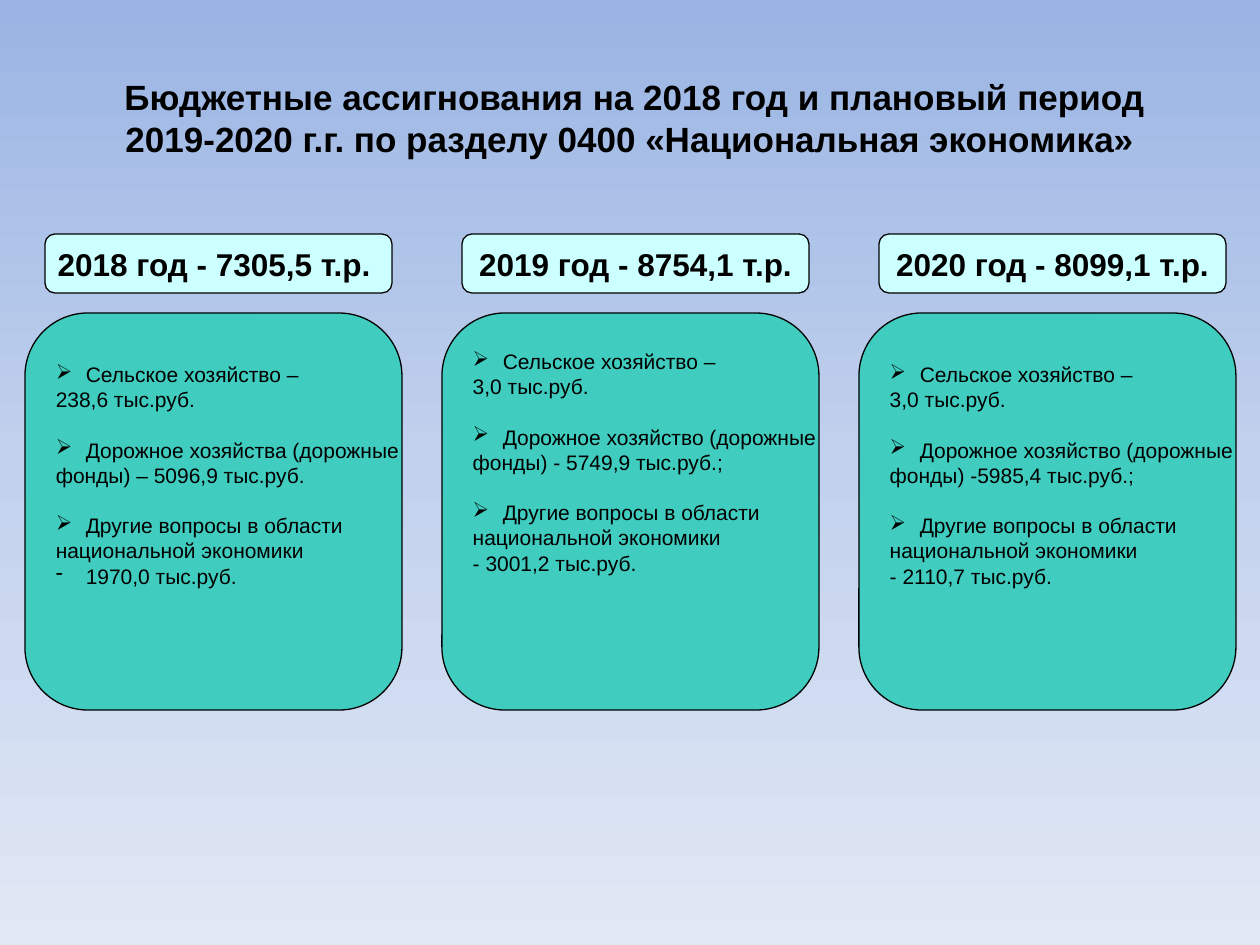
from copy import deepcopy

from lxml.etree import SubElement
from pptx import Presentation
from pptx.dml.color import RGBColor
from pptx.enum.shapes import MSO_SHAPE
from pptx.enum.text import MSO_ANCHOR, PP_ALIGN
from pptx.oxml.ns import qn
from pptx.util import Emu, Pt

EMU_PER_PX = 914400 // 126
COLUMN_PITCH = 417
BULLET_INDENT = 30
GAP_POINTS = 14.4

# Each line is (bullet, text); the groups are set apart by a gap.
YEARS = [
    ("2018 год - 7305,5 т.р. ", 30, [
        [("➢", "Сельское хозяйство –"), ("", "238,6 тыс.руб.")],
        [("➢", "Дорожное хозяйства (дорожные"), ("", "фонды) – 5096,9 тыс.руб.")],
        [("➢", "Другие вопросы в области"), ("", "национальной экономики"),
         ("-", "1970,0 тыс.руб.")],
    ]),
    ("2019 год - 8754,1 т.р.", 17, [
        [("➢", "Сельское хозяйство –"), ("", "3,0 тыс.руб.")],
        [("➢", "Дорожное хозяйство (дорожные"), ("", "фонды) - 5749,9 тыс.руб.;")],
        [("➢", "Другие вопросы в области"), ("", "национальной экономики"),
         ("", "- 3001,2 тыс.руб.")],
    ]),
    ("2020 год - 8099,1 т.р.", 30, [
        [("➢", "Сельское хозяйство –"), ("", "3,0 тыс.руб.")],
        [("➢", "Дорожное хозяйство (дорожные"), ("", "фонды) -5985,4 тыс.руб.;")],
        [("➢", "Другие вопросы в области"), ("", "национальной экономики"),
         ("", "- 2110,7 тыс.руб.")],
    ]),
]


def px(length):
    return Emu(length * EMU_PER_PX)


def color(hex_string):
    return RGBColor.from_string(hex_string)


def write(paragraph, text, size=12, bold=False, align=PP_ALIGN.LEFT, bullet="", before=0):
    paragraph.alignment = align
    paragraph.space_before = Pt(before)
    run = paragraph.add_run()
    run.text = text
    run.font.name = "Arial"
    run.font.size = Pt(size)
    run.font.bold = bold
    run.font.color.rgb = color("000000")
    if bullet:
        properties = paragraph._p.get_or_add_pPr()
        properties.set("marL", str(px(BULLET_INDENT)))
        properties.set("indent", str(-px(BULLET_INDENT)))
        SubElement(properties, qn("a:buChar"), char=bullet)


def add_rounded_box(slide, left, top, width, height, fill):
    shape = slide.shapes.add_shape(
        MSO_SHAPE.ROUNDED_RECTANGLE, px(left), px(top), px(width), px(height))
    shape.shadow.inherit = False
    shape.fill.solid()
    shape.fill.fore_color.rgb = color(fill)
    shape.line.color.rgb = color("000000")
    shape.line.width = Pt(0.75)
    shape.text_frame.word_wrap = False
    return shape


def set_background(slide):
    fill = slide.background.fill
    fill.gradient()
    fill.gradient_angle = 270
    first, last = fill.gradient_stops
    first.color.rgb = color("9AB5E4")
    last.color.rgb = color("E1E8F5")
    stops = slide.element.find(".//" + qn("a:gsLst"))
    stops.insert(1, deepcopy(stops[0]))
    middle = fill.gradient_stops[1]
    middle.position = 0.5
    middle.color.rgb = color("C2D1ED")


def add_title(slide, left, top, width, height):
    box = slide.shapes.add_textbox(px(left), px(top), px(width), px(height))
    frame = box.text_frame
    frame.word_wrap = True
    frame.vertical_anchor = MSO_ANCHOR.MIDDLE
    write(frame.paragraphs[0],
          " Бюджетные ассигнования на 2018 год и плановый период 2019-2020 г.г. "
          "по разделу 0400 «Национальная экономика»",
          size=20, bold=True, align=PP_ALIGN.CENTER)


def add_year(slide, left, top, heading, text_top, groups):
    """Draw a year's total above the card that breaks it down."""
    header = add_rounded_box(slide, left + 20, top, 347, 59, "CCFFFF")
    header.text_frame.vertical_anchor = MSO_ANCHOR.MIDDLE
    write(header.text_frame.paragraphs[0], heading, size=18, bold=True,
          align=PP_ALIGN.CENTER)

    frame = add_rounded_box(slide, left, top + 79, 377, 397, "40CCBF").text_frame
    frame.vertical_anchor = MSO_ANCHOR.TOP
    frame.margin_top = px(text_top)
    paragraph = frame.paragraphs[0]
    for group_index, group in enumerate(groups):
        for line_index, (bullet, text) in enumerate(group):
            if group_index or line_index:
                paragraph = frame.add_paragraph()
            starts_group = group_index > 0 and line_index == 0
            write(paragraph, text, bullet=bullet,
                  before=GAP_POINTS if starts_group else 0)


def main():
    presentation = Presentation()
    presentation.slide_width = px(1260)
    presentation.slide_height = px(945)
    slide = presentation.slides.add_slide(presentation.slide_layouts[6])
    set_background(slide)
    add_title(slide, 63, 38, 1134, 158)
    for index, (heading, text_top, groups) in enumerate(YEARS):
        add_year(slide, 25 + index * COLUMN_PITCH, 234, heading, text_top, groups)
    presentation.save("out.pptx")


if __name__ == "__main__":
    main()
